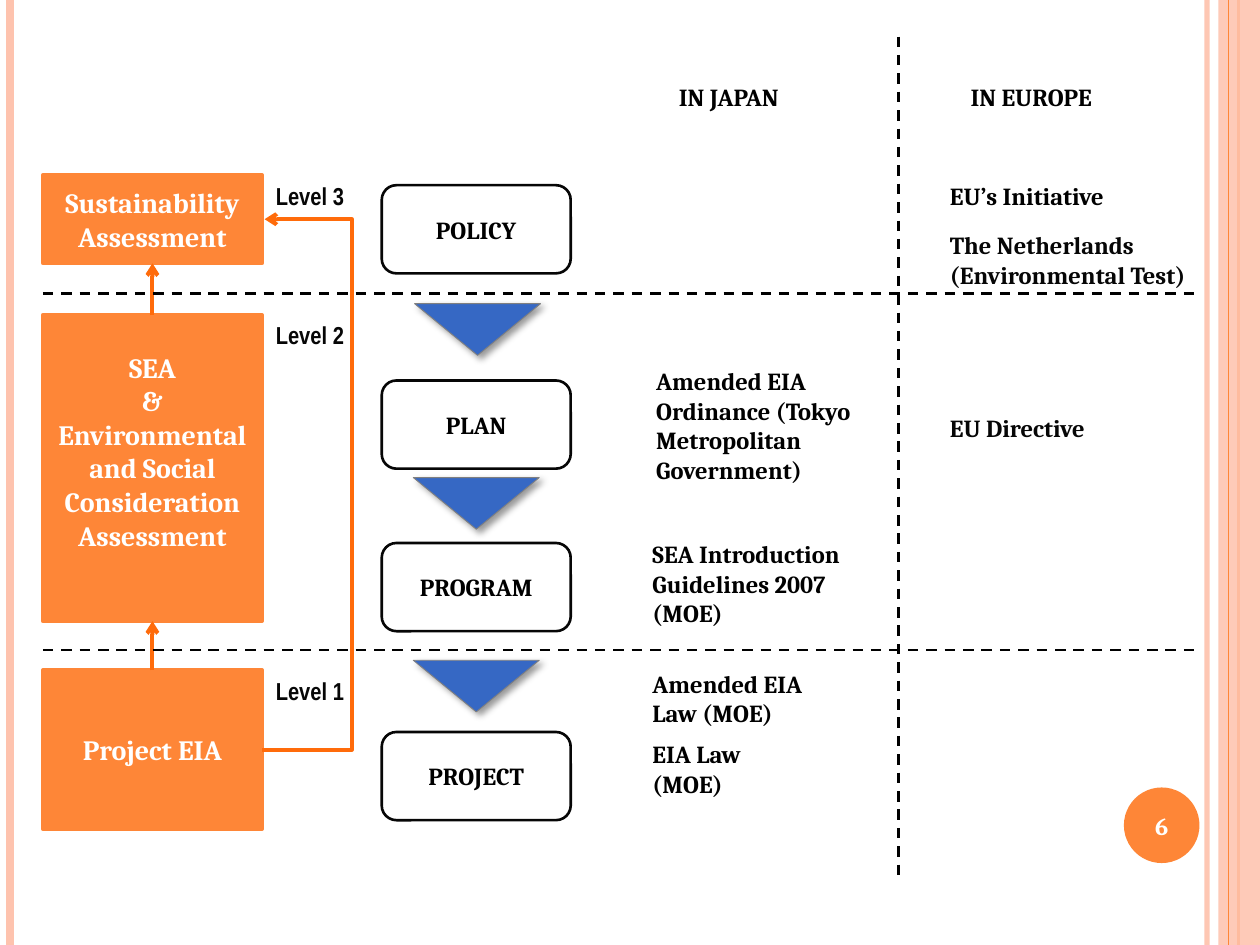
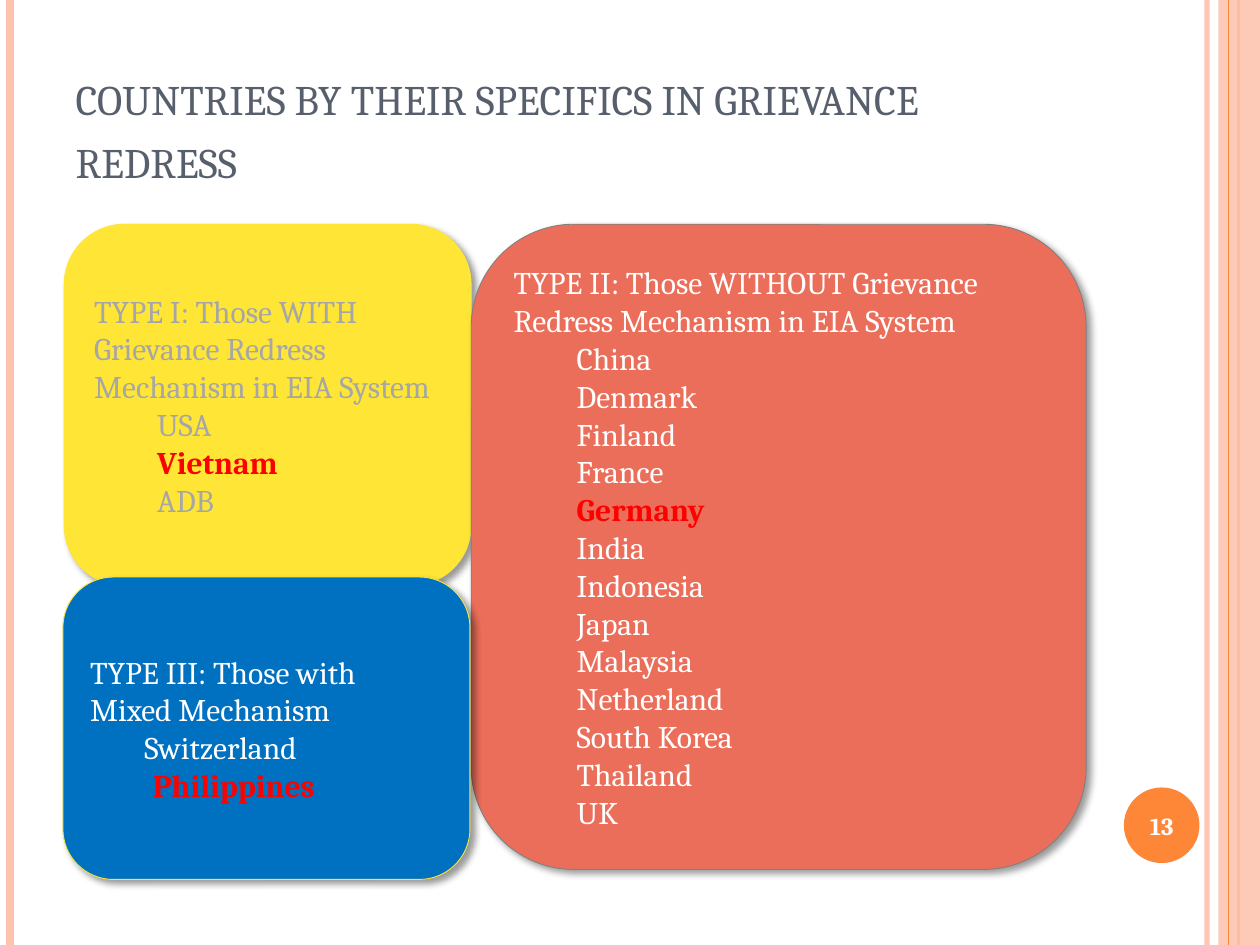
import lxml.etree
import pptx
import pptx.dml.color
import pptx.enum.dml
import pptx.enum.shapes
import pptx.enum.text
import pptx.oxml.ns
import pptx.util

Inches = pptx.util.Inches
Pt = pptx.util.Pt
SHAPE = pptx.enum.shapes.MSO_SHAPE
LINK = pptx.enum.shapes.MSO_CONNECTOR
ALIGN = pptx.enum.text.PP_ALIGN
ANCHOR = pptx.enum.text.MSO_ANCHOR

COLORS = {
    "orange": "FE8637",
    "peach": "FEC3AE",
    "arrow": "FF6B0A",
    "blue": "3668C4",
    "deep": "0070C0",
    "yellow": "FFE636",
    "coral": "EB6E5A",
    "red": "FF0000",
    "gray": "808080",
    "pale": "A6A6A6",
    "slate": "575F6D",
    "ink": "060606",
    "black": "000000",
    "white": "FFFFFF",
}
FONT = "Cambria"
NARROW = "Arial Narrow"


def tone(name):
    return pptx.dml.color.RGBColor.from_string(COLORS[name])


def add_node(parent, tag, **attrs):
    node = lxml.etree.SubElement(parent, pptx.oxml.ns.qn(tag))
    for key, value in attrs.items():
        node.set(key, str(value))
    return node


def fade(part, percent):
    for color in part.iter(pptx.oxml.ns.qn("a:srgbClr")):
        add_node(color, "a:alpha", val=percent * 1000)


def style(par, size, color, bold=False, font=FONT, align=ALIGN.LEFT):
    par.alignment = align
    for run in par.runs:
        run.font.name = font
        run.font.size = Pt(size)
        run.font.bold = bold
        run.font.color.rgb = tone(color)


def indent(par, width):
    par.level = 1
    props = par._p.get_or_add_pPr()
    props.set("marL", str(Inches(width)))
    props.set("indent", "0")


def add_line(slide, start, end, color, width, dash=False, arrow=False, kind=LINK.STRAIGHT):
    points = [Inches(v) for v in (*start, *end)]
    line = slide.shapes.add_connector(kind, *points)
    line.line.color.rgb = tone(color)
    line.line.width = Pt(width)
    if dash:
        line.line.dash_style = pptx.enum.dml.MSO_LINE.DASH
    if arrow:
        add_node(line.line._get_or_add_ln(), "a:tailEnd", type="arrow")
    add_node(line._element.spPr, "a:effectLst")
    return line


def add_box(slide, kind, place, fill=None, edge=None, width=0.5, shadow=False):
    box = slide.shapes.add_shape(kind, *[Inches(v) for v in place])
    if fill:
        box.fill.solid()
        box.fill.fore_color.rgb = tone(fill)
    else:
        box.fill.background()
    if edge:
        box.line.color.rgb = tone(edge)
        box.line.width = Pt(width)
    else:
        box.line.fill.background()
    box.shadow.inherit = False
    if shadow:
        effects = box._element.spPr.find(pptx.oxml.ns.qn("a:effectLst"))
        outer = add_node(effects, "a:outerShdw", blurRad=Pt(4), dist=Pt(3),
                         dir=45 * 60000, rotWithShape=0)
        add_node(outer, "a:srgbClr", val=COLORS["black"])
        fade(outer, 40)
    return box


def set_text(box, text, size, color, bold=True, align=ALIGN.CENTER):
    frame = box.text_frame
    frame.word_wrap = True
    frame.vertical_anchor = ANCHOR.MIDDLE
    frame.text = text
    for par in frame.paragraphs:
        style(par, size, color, bold, align=align)


def add_note(slide, text, place, color="black", font=FONT, align=ALIGN.LEFT):
    note = slide.shapes.add_textbox(*[Inches(v) for v in place])
    frame = note.text_frame
    frame.word_wrap = True
    frame.text = text
    style(frame.paragraphs[0], 14, color, True, font, align)


def add_frame(slide, number):
    edge = add_line(slide, (9.58, 0), (9.58, 7.5), "peach", 3)
    fade(edge._element.spPr, 93)
    add_line(slide, (0.08, 0), (0.08, 7.5), "peach", 4.5)
    add_line(slide, (9.83, 0), (9.83, 7.5), "orange", 1.5)
    band = add_box(slide, SHAPE.RECTANGLE, (9.67, 0, 0.33, 7.5), "peach")
    fade(band._element.spPr, 87)
    add_line(slide, (9.75, 0), (9.75, 7.5), "orange", 0.75)
    badge = add_box(slide, SHAPE.OVAL, (8.92, 6.25, 0.6, 0.6), "orange")
    set_text(badge, number, 14, "white")
    badge.text_frame.margin_left = badge.text_frame.margin_right = 0


def add_panel(slide, place, fill, edge, color, head, items, marked, steps=None):
    panel = add_box(slide, SHAPE.ROUNDED_RECTANGLE, place, fill, edge, shadow=True)
    set_text(panel, "\n".join([head, *items]), 18, color, False, ALIGN.LEFT)
    for par in panel.text_frame.paragraphs[1:]:
        indent(par, (steps or {}).get(par.text, 0.5))
        if par.text == marked:
            style(par, 18, "red", True)


def add_levels(prs):
    slide = prs.slides.add_slide(prs.slide_layouts[6])
    add_frame(slide, "6")

    stages = (("POLICY", 1.47), ("PLAN", 3.02), ("PROGRAM", 4.31), ("PROJECT", 5.81))
    for text, top in stages:
        box = add_box(slide, SHAPE.FLOWCHART_ALTERNATE_PROCESS,
                      (3.03, top, 1.5, 0.7), edge="ink", width=1.5)
        set_text(box, text, 14, "black")
    for left, top in ((3.29, 2.41), (3.28, 3.79), (3.28, 5.24)):
        wedge = add_box(slide, SHAPE.ISOSCELES_TRIANGLE, (left, top, 1, 0.41),
                        "blue", "gray", shadow=True)
        wedge.rotation = 180

    tiers = (
        ("Sustainability Assessment", 1.39, 0.7, 0.05),
        ("SEA\n&\nEnvironmental and Social Consideration Assessment", 2.5, 2.43, 0.32),
        ("Project EIA", 5.32, 1.26, 0.05),
    )
    for text, top, height, margin in tiers:
        box = add_box(slide, SHAPE.RECTANGLE, (0.34, top, 1.74, height),
                      "orange", "orange", 2.25)
        set_text(box, text, 16, "white")
        box.text_frame.margin_bottom = Inches(margin)
    for upper, lower in zip(tiers, tiers[1:]):
        add_line(slide, (1.21, lower[1]), (1.21, upper[1] + upper[2]),
                 "arrow", 2.25, arrow=True)
    bend = add_line(slide, (2.08, 5.95), (2.1, 1.74), "arrow", 2.25,
                    arrow=True, kind=LINK.ELBOW)
    shape = bend._element.spPr.find(pptx.oxml.ns.qn("a:prstGeom"))
    guides = shape.find(pptx.oxml.ns.qn("a:avLst"))
    if guides is None:
        guides = add_node(shape, "a:avLst")
    add_node(guides, "a:gd", name="adj1", fmla="val 3550000")

    for text, top in (("Level 3", 1.39), ("Level 2", 2.49), ("Level 1", 5.32)):
        add_note(slide, text, (2.09, top, 0.98, 0.34), "ink", NARROW)

    for top in (2.33, 5.16):
        add_line(slide, (0.34, top), (9.49, top), "black", 1.5, dash=True)
    add_line(slide, (7.13, 0.29), (7.13, 6.98), "black", 1.5, dash=True)

    for text, left in (("IN JAPAN", 4.76), ("IN EUROPE", 7.16)):
        add_note(slide, text, (left, 0.6, 2.05, 0.34), align=ALIGN.CENTER)
    notes = (
        ("Amended EIA Ordinance (Tokyo Metropolitan Government)", (5.11, 2.86, 1.97, 1.04)),
        ("SEA Introduction Guidelines 2007 (MOE)", (5.08, 4.23, 1.97, 0.81)),
        ("Amended EIA Law (MOE)", (5.08, 5.26, 1.5, 0.57)),
        ("EIA Law (MOE)", (5.08, 5.82, 1.5, 0.57)),
        ("EU’s Initiative", (7.44, 1.39, 1.5, 0.34)),
    )
    for text, place in notes:
        add_note(slide, text, place)
    add_note(slide, "The Netherlands (Environmental Test)", (7.44, 1.78, 2.28, 0.57), "ink")
    add_note(slide, "EU Directive", (7.44, 3.23, 1.97, 0.34), "ink")


def add_types(prs):
    slide = prs.slides.add_slide(prs.slide_layouts[5])
    add_frame(slide, "13")

    title = slide.shapes.title
    title.left, title.top, title.width, title.height = [
        Inches(v) for v in (0.5, 0.3, 8.17, 1.25)]
    frame = title.text_frame
    frame.text = "countries by their specifics in grievance redress"
    frame.word_wrap = True
    frame.auto_size = pptx.enum.text.MSO_AUTO_SIZE.NONE
    frame.vertical_anchor = ANCHOR.BOTTOM
    style(frame.paragraphs[0], 30, "slate")
    for run in frame.paragraphs[0].runs:
        run._r.get_or_add_rPr().set("cap", "small")

    add_panel(slide, (0.51, 1.78, 3.23, 2.87), "yellow", "yellow", "pale",
              "TYPE I: Those WITH Grievance Redress Mechanism in EIA System",
              ["USA", "Vietnam", "ADB"], "Vietnam")
    add_panel(slide, (3.74, 1.78, 4.88, 5.12), "coral", "gray", "white",
              "TYPE II: Those WITHOUT Grievance Redress Mechanism in EIA System",
              ["China", "Denmark", "Finland", "France", "Germany", "India",
               "Indonesia", "Japan", "Malaysia", "Netherland", "South Korea",
               "Thailand", "UK"], "Germany")
    add_panel(slide, (0.5, 4.58, 3.23, 2.4), "deep", "yellow", "white",
              "TYPE III: Those with Mixed Mechanism",
              ["Switzerland", "Philippines"], "Philippines", {"Switzerland": 0.43})


def main():
    prs = pptx.Presentation()
    prs.slide_width = Inches(10)
    prs.slide_height = Inches(7.5)
    add_levels(prs)
    add_types(prs)
    prs.save("out.pptx")


if __name__ == "__main__":
    main()
